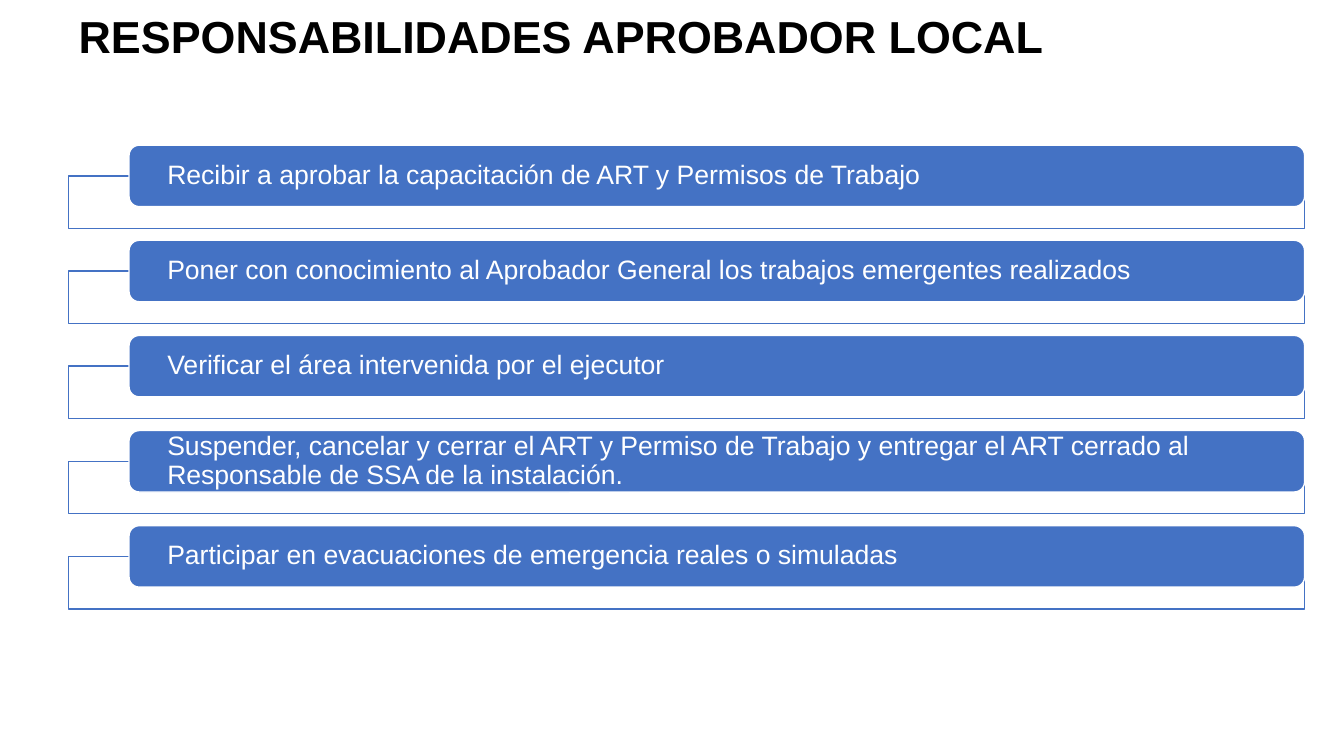
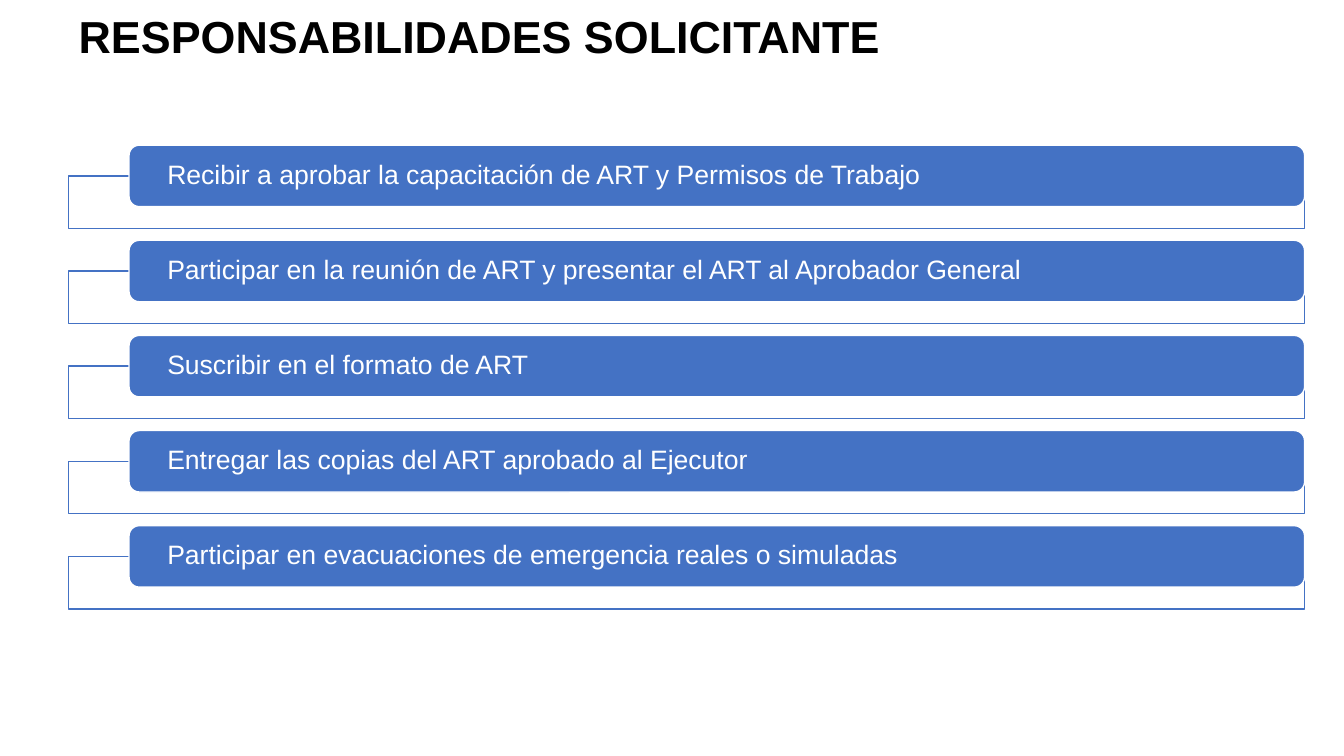
import pptx
import pptx.dml.color
import pptx.enum.shapes
import pptx.enum.text
import pptx.oxml.ns
import pptx.util
from dataclasses import dataclass
from lxml import etree

Inches = pptx.util.Inches
Pt = pptx.util.Pt
ShapeType = pptx.enum.shapes.MSO_SHAPE
Anchor = pptx.enum.text.MSO_ANCHOR
Align = pptx.enum.text.PP_ALIGN


def rgb(value):
    return pptx.dml.color.RGBColor.from_string(value)


@dataclass(frozen=True)
class Theme:
    font: str = "Arial"
    ink: str = "000000"
    paper: str = "FFFFFF"
    accent: str = "4472C4"
    title_size: int = 32
    item_size: int = 19
    line_width: int = 1
    line_spacing: float = 0.9
    frame_opacity: int = 90


THEME = Theme()
SLIDE_SIZE = (13.33, 7.5)

# Boxes: left, top, width, height in inches
TITLE_BOX = (0.68, 0.1, 12.65, 0.98)
LIST_BOX = (0.68, 1.44, 12.26, 4.6)

# Each list row: a bar with a frame hanging from its middle
BAR_HEIGHT = 0.61
FRAME_HEIGHT = 0.52
BAR_INDENT = 0.6
TEXT_INSET = 0.35

SLIDES = [
    ("RESPONSABILIDADES APROBADOR LOCAL", [
        "Recibir a aprobar la capacitación de ART y Permisos de Trabajo",
        "Poner con conocimiento al Aprobador General los trabajos emergentes realizados",
        "Verificar el área intervenida por el ejecutor",
        "Suspender, cancelar y cerrar el ART y Permiso de Trabajo y entregar el ART "
        "cerrado al Responsable de SSA de la instalación.",
        "Participar en evacuaciones de emergencia reales o simuladas",
    ]),
    ("RESPONSABILIDADES SOLICITANTE", [
        "Recibir a aprobar la capacitación de ART y Permisos de Trabajo",
        "Participar en la reunión de ART y presentar el ART al Aprobador General",
        "Suscribir en el formato de ART",
        "Entregar las copias del ART aprobado al Ejecutor",
        "Participar en evacuaciones de emergencia reales o simuladas",
    ]),
]


def set_attributes(target, values):
    for name, value in values.items():
        setattr(target, name, value)


def place(shape, box):
    names = ("left", "top", "width", "height")
    set_attributes(shape, dict(zip(names, map(Inches, box))))


def write_text(shape, text, size, color, bold, frame_format):
    text_frame = shape.text_frame
    text_frame.text = text
    set_attributes(text_frame, {
        "word_wrap": True,
        "auto_size": pptx.enum.text.MSO_AUTO_SIZE.NONE,
        **frame_format,
    })
    paragraph = text_frame.paragraphs[0]
    set_attributes(paragraph, {
        "alignment": Align.LEFT,
        "line_spacing": THEME.line_spacing,
        "space_before": Pt(0),
    })
    set_attributes(paragraph.font, {"name": THEME.font, "size": Pt(size), "bold": bold})
    paragraph.font.color.rgb = rgb(color)


def add_box(shapes, kind, box, fill, line):
    shape = shapes.add_shape(kind, *map(Inches, box))
    shape.shadow.inherit = False
    shape.fill.solid()
    shape.fill.fore_color.rgb = rgb(fill)
    shape.line.color.rgb = rgb(line)
    shape.line.width = Pt(THEME.line_width)
    return shape


def set_opacity(shape, percent):
    qn = pptx.oxml.ns.qn
    color = shape.fill._xPr.find(qn("a:solidFill")).find(qn("a:srgbClr"))
    etree.SubElement(color, qn("a:alpha")).set("val", str(percent * 1000))


def add_row(shapes, left, top, width, text):
    # Frame behind the bar
    frame_box = (left, top + BAR_HEIGHT / 2, width, FRAME_HEIGHT)
    frame = add_box(shapes, ShapeType.RECTANGLE, frame_box, THEME.paper, THEME.accent)
    set_opacity(frame, THEME.frame_opacity)

    # Rounded bar with the text
    bar_box = (left + BAR_INDENT, top, width - BAR_INDENT, BAR_HEIGHT)
    bar = add_box(shapes, ShapeType.ROUNDED_RECTANGLE, bar_box, THEME.accent, THEME.paper)
    write_text(bar, text, THEME.item_size, THEME.paper, False, {
        "vertical_anchor": Anchor.MIDDLE,
        "margin_left": Inches(TEXT_INSET),
        "margin_right": Inches(TEXT_INSET),
        "margin_top": 0,
        "margin_bottom": 0,
    })


def add_list(slide, box, items):
    left, top, width, height = box
    row_height = BAR_HEIGHT / 2 + FRAME_HEIGHT
    pitch = (height - row_height) / (len(items) - 1)
    group = slide.shapes.add_group_shape()
    for index, item in enumerate(items):
        add_row(group.shapes, left, top + index * pitch, width, item)


def add_list_slide(presentation, layout, title, items):
    slide = presentation.slides.add_slide(layout)
    write_text(slide.shapes.title, title, THEME.title_size, THEME.ink, True,
               {"vertical_anchor": Anchor.TOP})
    add_list(slide, LIST_BOX, items)


def main():
    presentation = pptx.Presentation()
    presentation.slide_width, presentation.slide_height = map(Inches, SLIDE_SIZE)

    # Shared title position
    layout = presentation.slide_layouts.get_by_name("Title Only")
    place(layout.placeholders[0], TITLE_BOX)

    for title, items in SLIDES:
        add_list_slide(presentation, layout, title, items)
    presentation.save("out.pptx")


if __name__ == "__main__":
    main()
